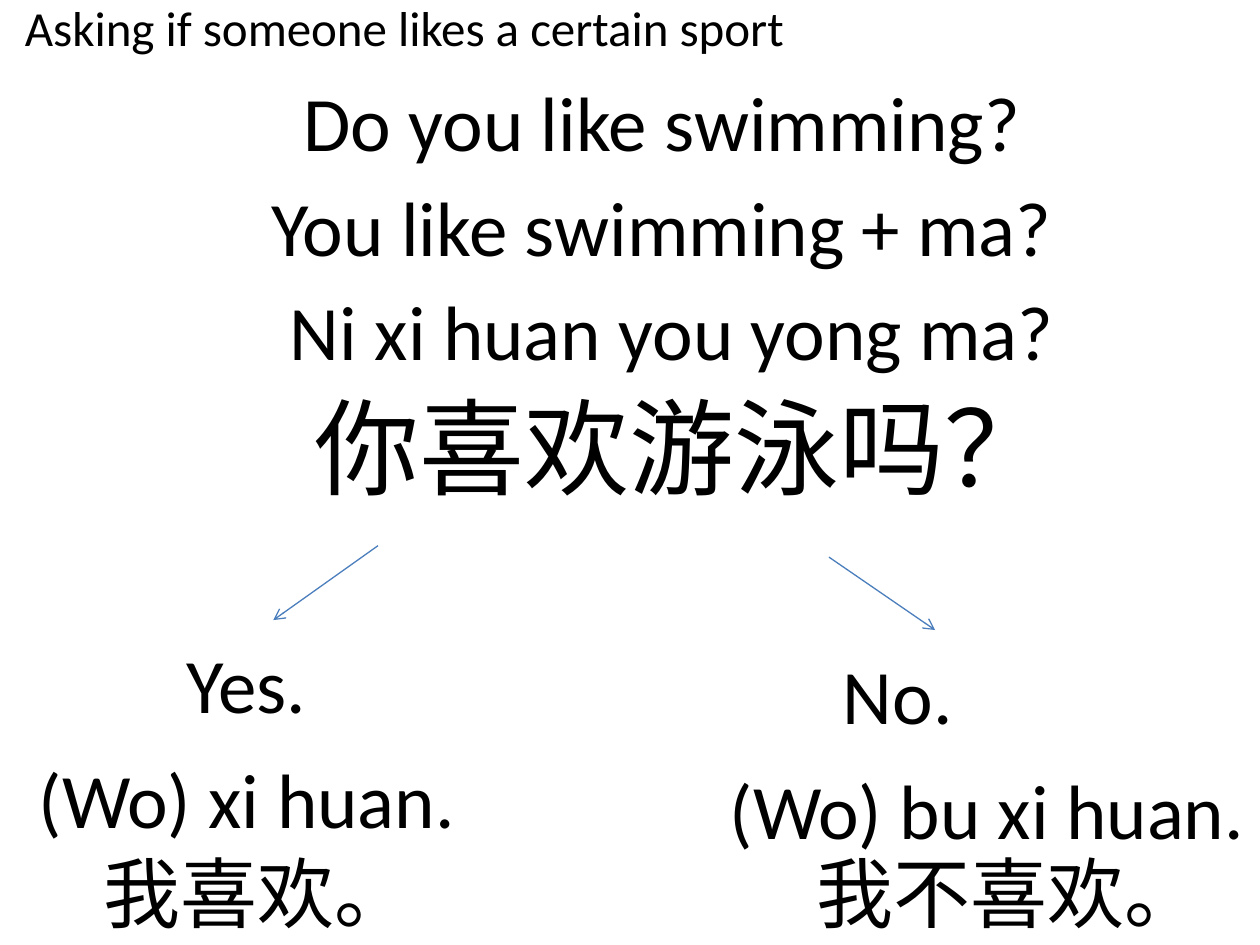
from lxml import etree
from pptx import Presentation
from pptx import util as u
from pptx.dml.color import RGBColor
from pptx.enum import shapes, text
from pptx.oxml.ns import qn

COLORS = {"text": "000000", "arrow": "4B7EBC"}
FONT = "Calibri"

# Content: wording, left, top (cm) and size (pt)
TITLE = "Asking if someone likes a certain sport"
QUESTIONS = [
    ("Do you like swimming?", 4.24, 1.07, 44),
    ("You like swimming + ma?", 4.24, 3.18, 44),
    ("Ni xi huan you yong ma?", 4.45, 5.28, 44),
    ("你喜欢游泳吗？", 4.65, 7.62, 60),
]
# Each answer: arrow start and end, then wording, left, top and width (cm)
ANSWERS = [
    {"arrow": (7.62, 11, 5.51, 12.5),
     "lines": [("Yes.", 0.84, 13.13, 8.26),
               ("(Wo) xi huan.", 0, 15.44, 9.96),
               ("我喜欢。", 1.07, 17.35, 8.26)]},
    {"arrow": (16.71, 11.23, 18.85, 12.7),
     "lines": [("No.", 13.97, 13.34, 8.26),
               ("(Wo) bu xi huan.", 14.4, 15.67, 11),
               ("我不喜欢。", 15.44, 17.35, 8.26)]},
]
QUESTION_SIZE = (18.21, 2.74)
ANSWER_HEIGHT = 1.27


def write(box, wording, size):
    frame = box.text_frame
    frame.text = wording
    frame.word_wrap = True
    frame.auto_size = text.MSO_AUTO_SIZE.NONE
    frame.vertical_anchor = text.MSO_ANCHOR.MIDDLE
    para = frame.paragraphs[0]
    para.alignment = text.PP_ALIGN.CENTER
    font = para.runs[0].font
    font.name, font.size = FONT, u.Pt(size)
    font.color.rgb = RGBColor.from_string(COLORS["text"])


def add_text(page, wording, left, top, width, height, size):
    box = page.shapes.add_textbox(*map(u.Cm, (left, top, width, height)))
    write(box, wording, size)


def add_arrow(page, ends):
    arrow = page.shapes.add_connector(
        shapes.MSO_CONNECTOR.STRAIGHT, *map(u.Cm, ends))
    arrow.line.width = u.Pt(0.75)
    arrow.line.color.rgb = RGBColor.from_string(COLORS["arrow"])
    etree.SubElement(arrow.line._get_or_add_ln(), qn("a:tailEnd"), type="arrow")
    etree.SubElement(arrow._element.spPr, qn("a:effectLst"))


def main():
    deck = Presentation()
    deck.slide_width, deck.slide_height = u.Cm(25.4), u.Cm(19.05)
    page = deck.slides.add_slide(deck.slide_layouts[5])

    # Title
    title = page.shapes.title
    title.left, title.top = u.Cm(0), u.Cm(0)
    title.width, title.height = u.Cm(16.3), u.Cm(1.07)
    write(title, TITLE, 28)

    # Question, from English to Chinese
    for wording, left, top, size in QUESTIONS:
        add_text(page, wording, left, top, *QUESTION_SIZE, size)

    # Yes and no answers
    for answer in ANSWERS:
        add_arrow(page, answer["arrow"])
        for wording, left, top, width in answer["lines"]:
            add_text(page, wording, left, top, width, ANSWER_HEIGHT, 44)

    deck.save("out.pptx")


if __name__ == "__main__":
    main()
